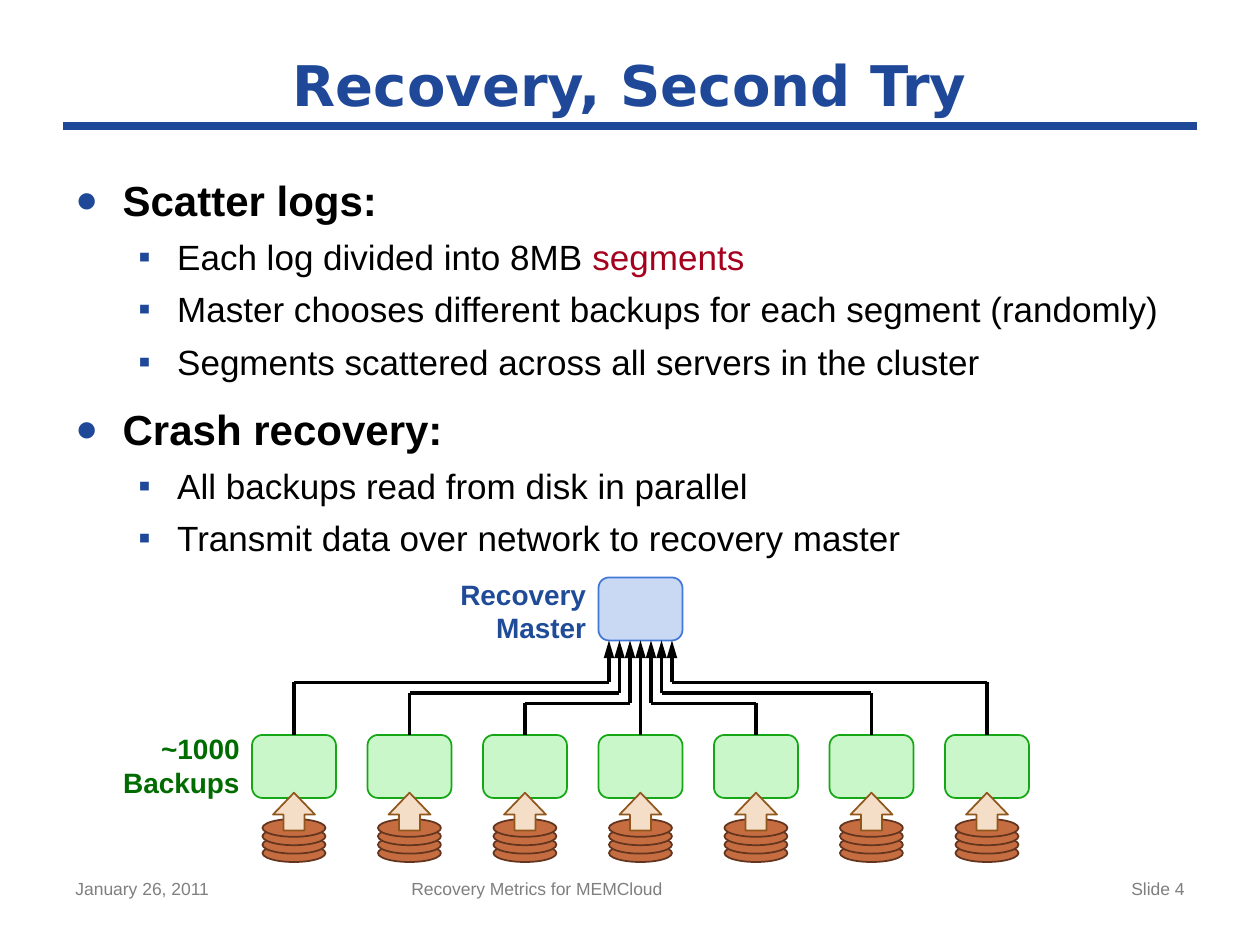
from lxml import etree
from pptx import Presentation
from pptx.dml.color import RGBColor
from pptx.enum.shapes import MSO_CONNECTOR, MSO_SHAPE
from pptx.enum.text import MSO_ANCHOR, PP_ALIGN
from pptx.oxml.ns import qn
from pptx.util import Emu, Pt

STRAIGHT = MSO_CONNECTOR.STRAIGHT
ROUNDED, ELLIPSE, UP_ARROW = MSO_SHAPE.ROUNDED_RECTANGLE, MSO_SHAPE.OVAL, MSO_SHAPE.UP_ARROW
TOP, MIDDLE = MSO_ANCHOR.TOP, MSO_ANCHOR.MIDDLE
LEFT, CENTER, RIGHT = PP_ALIGN.LEFT, PP_ALIGN.CENTER, PP_ALIGN.RIGHT

EMU_PER_PX = 7620
NAVY, BLACK, GRAY, RED = "1F4899", "000000", "7F7F7F", "A5001E"
MASTER_BLUE, BACKUP_GREEN = "204B98", "006C00"

BULLETS = [
    (0, [("Scatter logs:", BLACK)]),
    (1, [("Each log divided into 8MB ", BLACK), ("segments", RED)]),
    (1, [("Master chooses different backups for each segment (randomly)", BLACK)]),
    (1, [("Segments scattered across all servers in the cluster", BLACK)]),
    (0, [("Crash recovery:", BLACK)]),
    (1, [("All backups read from disk in parallel", BLACK)]),
    (1, [("Transmit data over network to recovery master", BLACK)]),
]
LEVELS = [
    {"size": 24, "bold": True, "before": 12, "margin": 45, "hang": 45, "mark": "●", "scale": 90},
    {"size": 20, "bold": False, "before": 6, "margin": 97, "hang": 37, "mark": "▪", "scale": 100},
]


def px(length):
    """Turn whole pixels into EMU."""
    return Emu(length * EMU_PER_PX)


def color(code):
    """Turn a hex string into a colour."""
    return RGBColor.from_string(code)


class SlideBuilder:
    """Holds the style and the current slide."""

    def __init__(self, slide, font="Arial"):
        """Keep the slide and its main font."""
        self.slide = slide
        self.font = font

    def run(self, paragraph, text, size, code, bold=False, font=None):
        """Add one styled run."""
        run = paragraph.add_run()
        run.text = text
        run.font.name = font or self.font
        run.font.size = Pt(size)
        run.font.bold = bold
        run.font.color.rgb = color(code)

    def frame(self, x, y, width, height, anchor=TOP, wrap=True):
        """Add an empty text box and return its frame."""
        box = self.slide.shapes.add_textbox(px(x), px(y), px(width), px(height))
        box.text_frame.word_wrap = wrap
        box.text_frame.vertical_anchor = anchor
        return box.text_frame

    def text(self, x, y, width, height, lines, size, code, align=LEFT,
             bold=False, font=None, anchor=TOP, wrap=True):
        """Add one paragraph, broken into the given lines."""
        paragraph = self.frame(x, y, width, height, anchor, wrap).paragraphs[0]
        paragraph.alignment = align
        for index, line in enumerate(lines):
            if index:
                paragraph.add_line_break()
            self.run(paragraph, line, size, code, bold, font)

    def bullets(self, x, y, width, height, items):
        """Add a bulleted list of two levels."""
        frame = self.frame(x, y, width, height)
        for index, (level, runs) in enumerate(items):
            paragraph = frame.add_paragraph() if index else frame.paragraphs[0]
            style = LEVELS[level]
            paragraph.level = level
            paragraph.space_before = Pt(style["before"])
            for text, code in runs:
                self.run(paragraph, text, style["size"], code, style["bold"])
            self.mark(paragraph, style)

    def mark(self, paragraph, style):
        """Give a paragraph its bullet and hanging indent."""
        properties = paragraph._p.get_or_add_pPr()
        properties.set("marL", str(px(style["margin"])))
        properties.set("indent", str(-px(style["hang"])))
        bullet_color = etree.SubElement(properties, qn("a:buClr"))
        etree.SubElement(bullet_color, qn("a:srgbClr"), val=NAVY)
        etree.SubElement(properties, qn("a:buSzPct"), val=str(style["scale"] * 1000))
        etree.SubElement(properties, qn("a:buFont"), typeface=self.font)
        etree.SubElement(properties, qn("a:buChar"), char=style["mark"])

    def shape(self, kind, x, y, width, height, fill, line, adjustments=()):
        """Add a filled and outlined preset shape."""
        shape = self.slide.shapes.add_shape(kind, px(x), px(y), px(width), px(height))
        shape.shadow.inherit = False
        shape.fill.solid()
        shape.fill.fore_color.rgb = color(fill)
        shape.line.color.rgb = color(line)
        shape.line.width = Pt(1)
        for index, value in enumerate(adjustments):
            shape.adjustments[index] = value

    def line(self, start, end, code=BLACK, width=2, arrow=False):
        """Add a straight line, with an arrowhead at its end if asked."""
        connector = self.slide.shapes.add_connector(STRAIGHT, *map(px, start + end))
        connector.line.color.rgb = color(code)
        connector.line.width = Pt(width)
        if arrow:
            etree.SubElement(connector.line._get_or_add_ln(), qn("a:tailEnd"),
                             type="triangle", w="med", len="lg")
        etree.SubElement(connector._element.spPr, qn("a:effectLst"))

    def backup(self, center):
        """Add a backup server with its disk stack and read arrow."""
        for y in range(804, 779, -8):
            self.shape(ELLIPSE, center - 30, y, 60, 17, "C56D41", "64351E")
        self.shape(ROUNDED, center - 40, 700, 80, 60, "C9F7C9", "15A715")
        self.shape(UP_ARROW, center - 20, 755, 40, 36, "F4DEC8", "90561C", (0.5, 0.58))

    def route(self, center, port, lane):
        """Link a backup to its port on the recovery master."""
        if center == port:
            self.line((center, 700), (port, 610), arrow=True)
            return
        self.line((center, lane), (center, 700))
        self.line((center, lane), (port, lane))
        self.line((port, lane), (port, 610), arrow=True)


def main():
    """Build the slide and save it."""
    presentation = Presentation()
    presentation.slide_width, presentation.slide_height = px(1200), px(900)
    builder = SlideBuilder(presentation.slides.add_slide(presentation.slide_layouts[6]))

    builder.line((60, 120), (1140, 120), NAVY, 4.5)
    builder.text(60, 830, 280, 52, ["January 26, 2011"], 10, GRAY)
    builder.text(380, 830, 450, 52, ["Recovery Metrics for MEMCloud"], 10, GRAY)
    builder.text(860, 830, 280, 52, ["Slide 4"], 10, GRAY, RIGHT)
    builder.text(60, 40, 1080, 80, ["Recovery, Second Try"], 32, NAVY, CENTER,
                 bold=True, font="DejaVu Sans", anchor=MIDDLE)
    builder.bullets(60, 160, 1080, 400, BULLETS)

    builder.shape(ROUNDED, 570, 550, 80, 60, "C9D8F3", "4177D7")
    builder.text(425, 544, 145, 77, ["Recovery", "Master"], 16, MASTER_BLUE, RIGHT,
                 bold=True, wrap=False)
    builder.text(104, 691, 136, 77, ["~1000", "Backups"], 16, BACKUP_GREEN, RIGHT,
                 bold=True, wrap=False)

    middle = 610
    offsets = range(-3, 4)
    for offset in offsets:
        builder.backup(middle + 110 * offset)
    for offset in offsets:
        builder.route(middle + 110 * offset, middle + 10 * offset, 680 - 10 * abs(offset))

    presentation.save("out.pptx")


if __name__ == "__main__":
    main()
